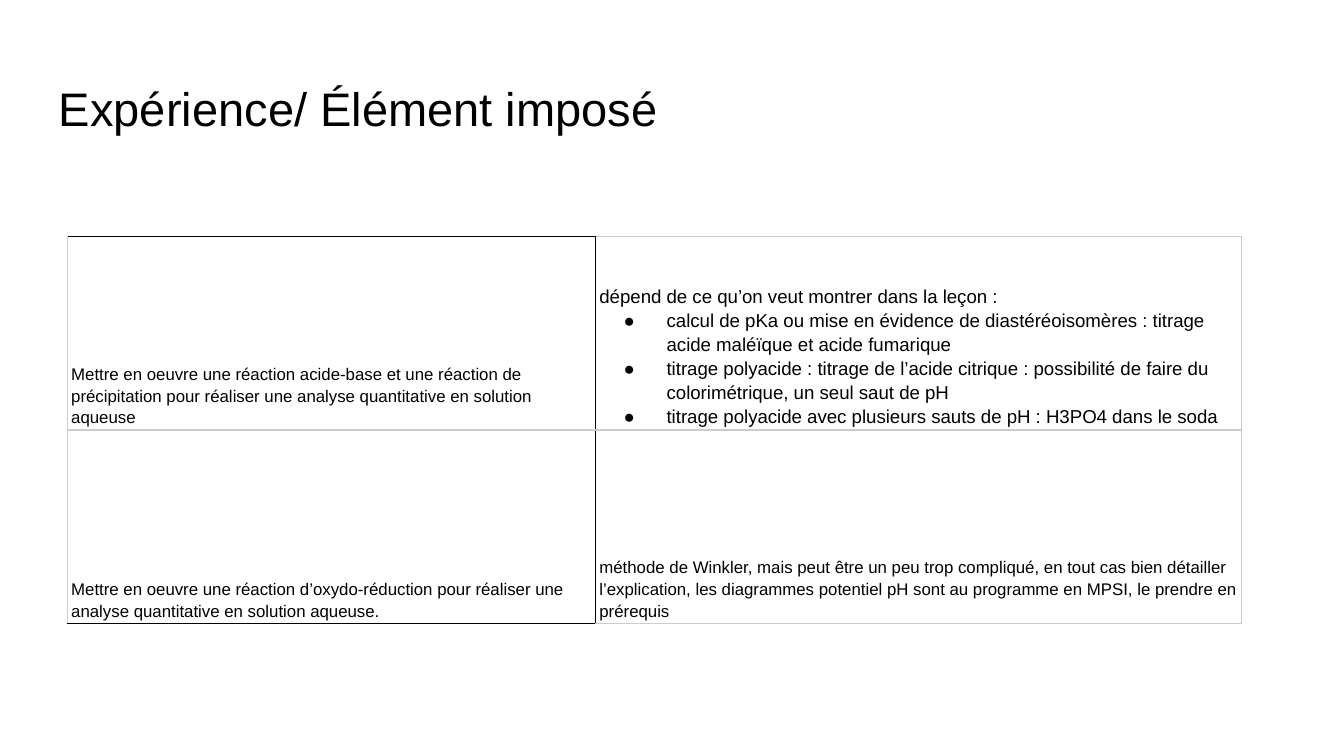
import pptx
import pptx.util
import pptx.dml.color
import pptx.enum.text
import pptx.oxml
import pptx.oxml.ns

Inches = pptx.util.Inches
Pt = pptx.util.Pt
ANCHOR = pptx.enum.text.MSO_ANCHOR
GREY = "CCCCCC"
BLACK = "000000"
NS = pptx.oxml.ns.nsdecls("a")


def color(value):
    return pptx.dml.color.RGBColor.from_string(value)


def add_text(paragraph, text, size):
    run = paragraph.add_run()
    run.text = text
    run.font.size = Pt(size)
    run.font.name = "Arial"
    run.font.color.rgb = color(BLACK)


deck = pptx.Presentation()
deck.slide_width = Inches(10)
deck.slide_height = Inches(10 * 9 / 16)
slide = deck.slides.add_slide(deck.slide_layouts[6])

title = slide.shapes.add_textbox(Inches(0.34), Inches(0.49), Inches(9.32), Inches(0.63)).text_frame
title.word_wrap = True
title.vertical_anchor = ANCHOR.MIDDLE
title.margin_left = title.margin_right = Inches(0.1)
title.margin_top = title.margin_bottom = Inches(0.1)
add_text(title.paragraphs[0], "Expérience/ Élément imposé", 25.2)

acid_base = ["Mettre en oeuvre une réaction acide-base et une réaction de précipitation pour réaliser une analyse quantitative en solution aqueuse"]
titrations = [
    "dépend de ce qu’on veut montrer dans la leçon :",
    "calcul de pKa ou mise en évidence de diastéréoisomères : titrage acide maléïque et acide fumarique",
    "titrage polyacide : titrage de l’acide citrique : possibilité de faire du colorimétrique, un seul saut de pH",
    "titrage polyacide avec plusieurs sauts de pH : H3PO4 dans le soda",
]
redox = ["Mettre en oeuvre une réaction d’oxydo-réduction pour réaliser une analyse quantitative en solution aqueuse."]
winkler = ["méthode de Winkler, mais peut être un peu trop compliqué, en tout cas bien détailler l’explication, les diagrammes potentiel pH sont au programme en MPSI, le prendre en prérequis"]

experiments = [
    (0, 0, acid_base, 9, {"L": GREY, "R": BLACK, "T": BLACK, "B": GREY}),
    (0, 1, titrations, 10, {"L": BLACK, "R": GREY, "T": GREY, "B": GREY}),
    (1, 0, redox, 9, {"L": GREY, "R": BLACK, "T": GREY, "B": BLACK}),
    (1, 1, winkler, 9, {"L": BLACK, "R": GREY, "T": GREY, "B": GREY}),
]

table = slide.shapes.add_table(2, 2, Inches(0.5), Inches(1.76), Inches(8.74), Inches(2.88)).table
table.first_row = False
table.horz_banding = False
for column, width in zip(table.columns, (3.93, 4.81)):
    column.width = Inches(width)
for row in table.rows:
    row.height = Inches(1.44)

for row_index, column_index, lines, size, borders in experiments:
    cell = table.cell(row_index, column_index)
    cell.vertical_anchor = ANCHOR.BOTTOM
    cell.margin_left = cell.margin_right = Inches(0.03)
    cell.margin_top = cell.margin_bottom = Inches(0.02)
    properties = cell._tc.get_or_add_tcPr()
    for side, border in borders.items():
        properties.append(pptx.oxml.parse_xml(
            f'<a:ln{side} {NS} w="{Pt(0.75)}"><a:solidFill><a:srgbClr val="{border}"/></a:solidFill></a:ln{side}>'
        ))
    cell.fill.solid()
    cell.fill.fore_color.rgb = color("FFFFFF")
    for index, line in enumerate(lines):
        paragraph = cell.text_frame.paragraphs[0] if index == 0 else cell.text_frame.add_paragraph()
        paragraph.line_spacing = 1.15
        if index > 0:
            layout = paragraph._p.get_or_add_pPr()
            layout.set("marL", str(Inches(0.5)))
            layout.set("indent", str(Inches(-0.32)))
            layout.append(pptx.oxml.parse_xml(f'<a:buClr {NS}><a:srgbClr val="{BLACK}"/></a:buClr>'))
            layout.append(pptx.oxml.parse_xml(f'<a:buFont {NS} typeface="Arial"/>'))
            layout.append(pptx.oxml.parse_xml(f'<a:buChar {NS} char="●"/>'))
        add_text(paragraph, line, size)

deck.save("out.pptx")
